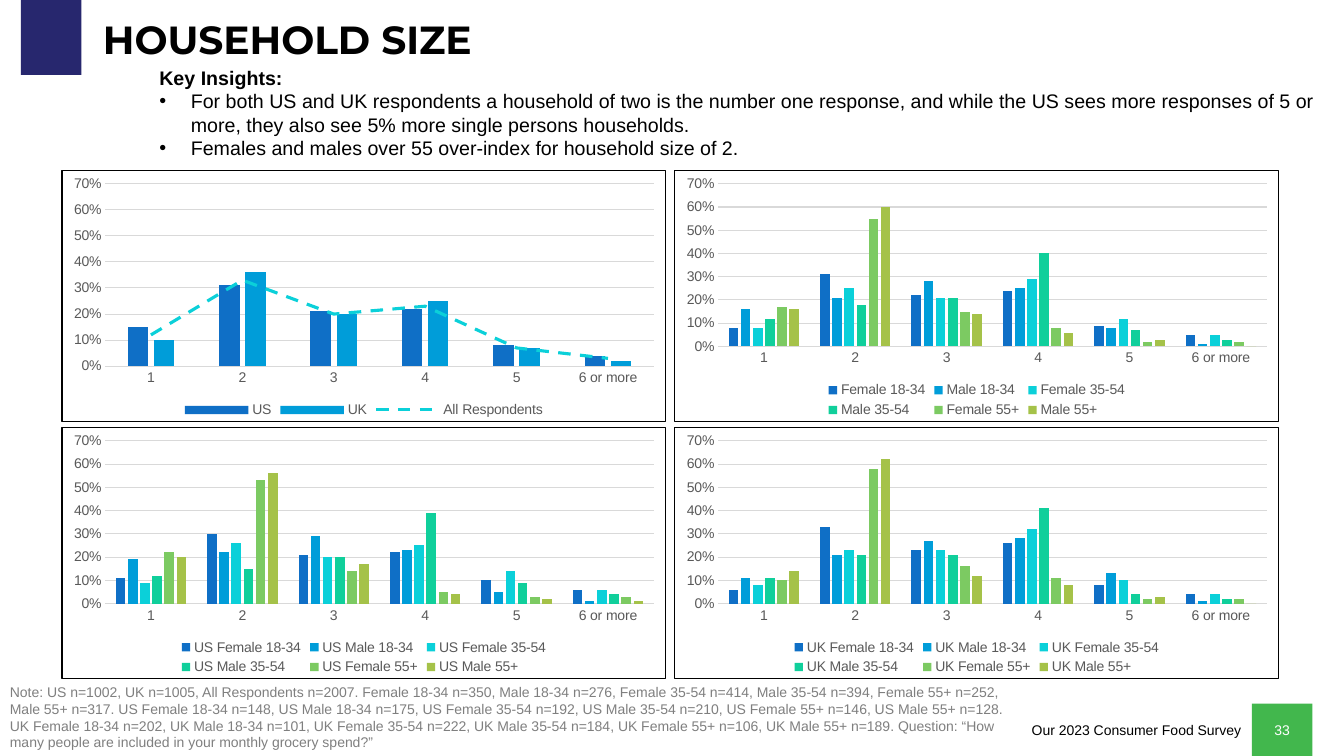
from dataclasses import dataclass

from lxml.etree import SubElement
from pptx import Presentation
from pptx.chart.chart import Chart
from pptx.chart.data import CategoryChartData
from pptx.dml.color import RGBColor
from pptx.enum.chart import XL_CHART_TYPE, XL_LEGEND_POSITION, XL_MARKER_STYLE, XL_TICK_MARK
from pptx.enum.dml import MSO_LINE
from pptx.enum.shapes import MSO_SHAPE
from pptx.enum.text import MSO_ANCHOR, MSO_AUTO_SIZE, PP_ALIGN
from pptx.oxml import parse_xml
from pptx.oxml.ns import nsdecls, qn
from pptx.util import Pt

BLACK = RGBColor(0x00, 0x00, 0x00)
WHITE = RGBColor(0xFF, 0xFF, 0xFF)
NAVY = RGBColor(0x27, 0x27, 0x6E)
GREEN = RGBColor(0x42, 0xB7, 0x4D)
GRAY = RGBColor(0x7F, 0x7F, 0x7F)
DARK = RGBColor(0x59, 0x59, 0x59)
PALE = RGBColor(0xD9, 0xD9, 0xD9)
HUES = (RGBColor(0x0F, 0x6F, 0xC6), RGBColor(0x00, 0x9D, 0xD9), RGBColor(0x0B, 0xD0, 0xD9),
        RGBColor(0x10, 0xCF, 0x9B), RGBColor(0x7C, 0xCA, 0x62), RGBColor(0xA5, 0xC2, 0x49))

SIZES = ("1", "2", "3", "4", "5", "6 or more")
GROUPS = tuple(f"{sex} {age}" for age in ("18-34", "35-54", "55+") for sex in ("Female", "Male"))

# Chart grid
LEFT, TOP, WIDE, HIGH = 43.9, 121.7, 432, 180
STEP_X, STEP_Y = 437.8, 183.6


@dataclass(frozen=True)
class Panel:
    names: tuple[str, ...]
    rows: tuple[tuple[float, ...], ...]
    trend: bool = False


PANELS = (
    Panel(("US", "UK", "All Respondents"), (
        (0.15, 0.31, 0.21, 0.22, 0.08, 0.04),
        (0.10, 0.36, 0.20, 0.25, 0.07, 0.02),
        (0.12, 0.33, 0.20, 0.23, 0.07, 0.03)), trend=True),
    Panel(GROUPS, (
        (0.08, 0.31, 0.22, 0.24, 0.09, 0.05),
        (0.16, 0.21, 0.28, 0.25, 0.08, 0.01),
        (0.08, 0.25, 0.21, 0.29, 0.12, 0.05),
        (0.12, 0.18, 0.21, 0.40, 0.07, 0.03),
        (0.17, 0.55, 0.15, 0.08, 0.02, 0.02),
        (0.16, 0.60, 0.14, 0.06, 0.03, 0.00))),
    Panel(tuple(f"US {name}" for name in GROUPS), (
        (0.11, 0.30, 0.21, 0.22, 0.10, 0.06),
        (0.19, 0.22, 0.29, 0.23, 0.05, 0.01),
        (0.09, 0.26, 0.20, 0.25, 0.14, 0.06),
        (0.12, 0.15, 0.20, 0.39, 0.09, 0.04),
        (0.22, 0.53, 0.14, 0.05, 0.03, 0.03),
        (0.20, 0.56, 0.17, 0.04, 0.02, 0.01))),
    Panel(tuple(f"UK {name}" for name in GROUPS), (
        (0.06, 0.33, 0.23, 0.26, 0.08, 0.04),
        (0.11, 0.21, 0.27, 0.28, 0.13, 0.01),
        (0.08, 0.23, 0.23, 0.32, 0.10, 0.04),
        (0.11, 0.21, 0.21, 0.41, 0.04, 0.02),
        (0.10, 0.58, 0.16, 0.11, 0.02, 0.02),
        (0.14, 0.62, 0.12, 0.08, 0.03, 0.00))),
)

NOTE = (
    "Note: US n=1002, UK n=1005, All Respondents n=2007. Female 18-34 n=350, Male 18-34 n=276, "
    "Female 35-54 n=414, Male 35-54 n=394, Female 55+ n=252, Male 55+ n=317. "
    "US Female 18-34 n=148, US Male 18-34 n=175, US Female 35-54 n=192, US Male 35-54 n=210, "
    "US Female 55+ n=146, US Male 55+ n=128. UK Female 18-34 n=202, UK Male 18-34 n=101, "
    "UK Female 35-54 n=222, UK Male 35-54 n=184, UK Female 55+ n=106, UK Male 55+ n=189. "
    "Question: “How many people are included in your monthly grocery spend?”"
)
HEAD = "Key Insights:"
POINTS = (
    "For both US and UK respondents a household of two is the number one response, and while "
    "the US sees more responses of 5 or more, they also see 5% more single persons households.",
    "Females and males over 55 over-index for household size of 2.",
)


def place(shape, left: float, top: float, wide: float, high: float) -> None:
    shape.left, shape.top, shape.width, shape.height = Pt(left), Pt(top), Pt(wide), Pt(high)


def write(frame, text: str, *, size: float = 10, color: RGBColor = BLACK, bold: bool = False,
          face: str = "Arial", align=PP_ALIGN.LEFT, anchor=MSO_ANCHOR.TOP,
          space: float = 1.0, mark: str = "", more: bool = False) -> None:
    frame.word_wrap = True
    frame.auto_size = MSO_AUTO_SIZE.NONE
    frame.vertical_anchor = anchor
    para = frame.add_paragraph() if more else frame.paragraphs[0]
    props = para._p.get_or_add_pPr()
    hang = Pt(22.5) if mark else 0
    props.set("marL", str(hang))
    props.set("indent", str(-hang))
    if mark:
        SubElement(props, qn("a:buChar")).set("char", mark)
    else:
        SubElement(props, qn("a:buNone"))
    para.alignment, para.line_spacing, para.space_before = align, space, Pt(0)
    run = para.add_run()
    run.text = text
    font = run.font
    font.name, font.size, font.bold, font.color.rgb = face, Pt(size), bold, color


def block(slide, color: RGBColor, *area: float):
    shape = slide.shapes.add_shape(MSO_SHAPE.RECTANGLE, *map(Pt, area))
    shape.shadow.inherit = False
    shape.fill.solid()
    shape.fill.fore_color.rgb = color
    shape.line.fill.background()
    return shape


def style(font, color: RGBColor) -> None:
    font.name, font.size, font.color.rgb = "Arial", Pt(10), color


def rule(line, color: RGBColor) -> None:
    line.color.rgb, line.width = color, Pt(0.75)


def frame_in(chart: Chart) -> None:
    root = chart._chartSpace
    root.find(qn("c:chart")).addnext(parse_xml(
        f'<c:spPr {nsdecls("c", "a")}><a:solidFill><a:srgbClr val="{WHITE}"/></a:solidFill>'
        f'<a:ln w="{Pt(0.75)}"><a:solidFill><a:srgbClr val="{BLACK}"/></a:solidFill></a:ln></c:spPr>'))


def add_trend(chart: Chart) -> None:
    """Turn the last column series into a dashed line on the same axes."""
    bars = chart._chartSpace.find(".//" + qn("c:barChart"))
    last = bars.findall(qn("c:ser"))[-1]
    flag = last.find(qn("c:invertIfNegative"))
    if flag is not None:
        last.remove(flag)
    lines = parse_xml(f'<c:lineChart {nsdecls("c")}><c:grouping val="standard"/>'
                      '<c:varyColors val="0"/></c:lineChart>')
    lines.append(last)
    SubElement(lines, qn("c:marker")).set("val", "1")
    for axis in bars.findall(qn("c:axId")):
        SubElement(lines, qn("c:axId")).set("val", axis.get("val"))
    bars.addnext(lines)
    trend = chart.plots[1].series[0]
    trend.smooth = False
    trend.marker.style = XL_MARKER_STYLE.NONE
    line = trend.format.line
    line.color.rgb, line.width, line.dash_style = HUES[2], Pt(2.25), MSO_LINE.DASH


def draw(slide, panel: Panel, left: float, top: float) -> None:
    data = CategoryChartData(number_format="0%")
    data.categories = SIZES
    for name, row in zip(panel.names, panel.rows):
        data.add_series(name, row)
    chart = slide.shapes.add_chart(XL_CHART_TYPE.COLUMN_CLUSTERED, Pt(left), Pt(top),
                                   Pt(WIDE), Pt(HIGH), data).chart
    style(chart.font, BLACK)
    chart.has_title = False
    frame_in(chart)

    plot = chart.plots[0]
    plot.gap_width, plot.overlap, plot.vary_by_categories = 219, -27, False
    if panel.trend:
        add_trend(chart)
    for bar, hue in zip(plot.series, HUES):
        bar.format.fill.solid()
        bar.format.fill.fore_color.rgb = hue

    for axis in (chart.category_axis, chart.value_axis):
        axis.major_tick_mark = axis.minor_tick_mark = XL_TICK_MARK.NONE
        style(axis.tick_labels.font, DARK)
    rule(chart.category_axis.format.line, PALE)
    scale = chart.value_axis
    scale.minimum_scale, scale.maximum_scale, scale.major_unit = 0, 0.7, 0.1
    scale.format.line.fill.background()
    rule(scale.major_gridlines.format.line, PALE)
    scale.tick_labels.number_format = "0%"
    scale.tick_labels.number_format_is_linked = False

    chart.has_legend = True
    chart.legend.position = XL_LEGEND_POSITION.BOTTOM
    chart.legend.include_in_layout = False
    style(chart.legend.font, DARK)


def main() -> None:
    deck = Presentation()
    deck.slide_width, deck.slide_height = Pt(960), Pt(540)
    slide = deck.slides.add_slide(deck.slide_layouts[1])
    title, body = slide.placeholders

    # Title and key insights
    block(slide, NAVY, 15, 0, 43.2, 53.5)
    place(title, 66.3, 11.5, 828, 36)
    write(title.text_frame, "HOUSEHOLD SIZE", size=28, bold=True, face="Montserrat",
          anchor=MSO_ANCHOR.MIDDLE, space=0.9)
    place(body, 106.6, 43.2, 843.8, 126)
    write(body.text_frame, HEAD, size=14, bold=True)
    for point in POINTS:
        write(body.text_frame, point, size=14, mark="•", more=True)

    # Four charts
    for spot, panel in enumerate(PANELS):
        row, col = divmod(spot, 2)
        draw(slide, panel, LEFT + col * STEP_X, TOP + row * STEP_Y)

    # Note, survey name and page number
    note = slide.shapes.add_textbox(Pt(0), Pt(484.6), Pt(737.3), Pt(55.4))
    write(note.text_frame, NOTE, color=GRAY)
    foot = slide.shapes.add_textbox(Pt(570.2), Pt(511.9), Pt(323.3), Pt(19.4))
    write(foot.text_frame, "Our 2023 Consumer Food Survey", align=PP_ALIGN.RIGHT)
    page = block(slide, GREEN, 894.2, 502.6, 43.2, 37.4)
    write(page.text_frame, "33", color=WHITE, align=PP_ALIGN.CENTER, anchor=MSO_ANCHOR.MIDDLE)

    deck.save("out.pptx")


if __name__ == "__main__":
    main()
